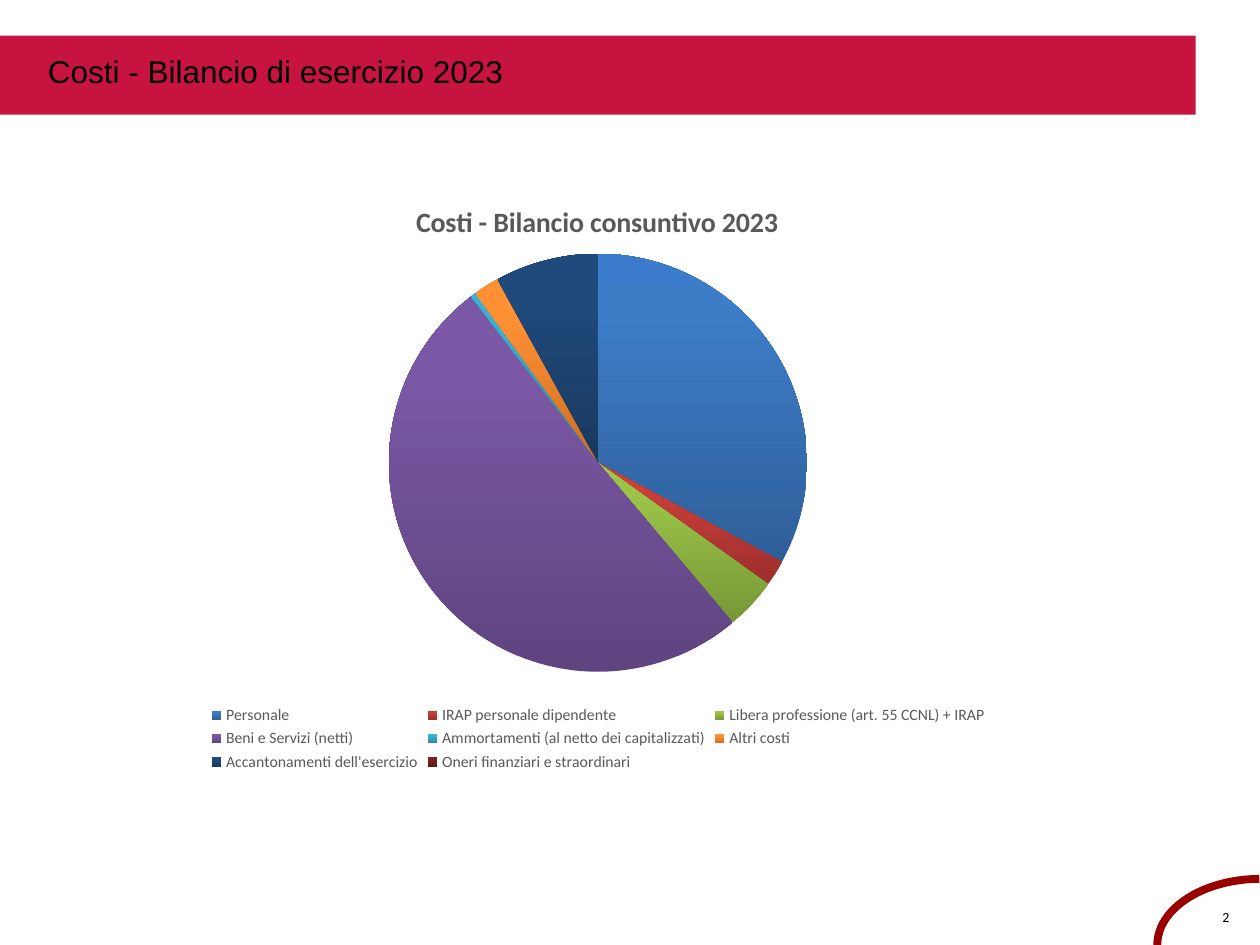
from copy import deepcopy

from lxml import etree
from pptx import Presentation
from pptx.chart.data import CategoryChartData
from pptx.dml.color import RGBColor
from pptx.enum.chart import XL_CHART_TYPE, XL_LEGEND_POSITION
from pptx.enum.shapes import MSO_SHAPE
from pptx.enum.text import MSO_ANCHOR, MSO_AUTO_SIZE, PP_ALIGN
from pptx.oxml.ns import qn
from pptx.util import Pt

PIE = XL_CHART_TYPE.PIE
BOTTOM = XL_LEGEND_POSITION.BOTTOM
RECTANGLE, ARC = MSO_SHAPE.RECTANGLE, MSO_SHAPE.ARC
TOP = MSO_ANCHOR.TOP
NO_AUTOFIT = MSO_AUTO_SIZE.NONE
LEFT, CENTER = PP_ALIGN.LEFT, PP_ALIGN.CENTER

# Content
TITLE = "Costi - Bilancio di esercizio 2023"
CHART_TITLE = "Costi - Bilancio consuntivo 2023"
PAGE_NUMBER = "2"
COSTS = [  # category, percentage, gradient colours from bottom to top
    ("Personale", 33, ("2F5F99", "3D7CC7", "3A7CCB")),
    ("IRAP personale dipendente", 2, ("9C2F2D", "CB3E3A", "CE3B37")),
    ("Libera professione (art. 55 CCNL) + IRAP", 4, ("779737", "9BC348", "9DC746")),
    ("Beni e Servizi (netti)", 51, ("5F4480", "7B58A6", "7C57A8")),
    ("Ammortamenti (al netto dei capitalizzati)", 0.4, ("2A88A2", "37B1D2", "34B4D6")),
    ("Altri costi", 2, ("CC6E20", "FF9034", "FF9136")),
    ("Accantonamenti dell'esercizio", 8, ("19395F", "204A7C", "1E4A7E")),
    ("Oneri finanziari e straordinari", 0, ("621917", "7F201E", "811F1C")),
]

# Theme and positions (points)
THEME = {
    "band": "C6133F", "arc": "990000", "text": "000000", "chart_text": "595959",
    "heading_font": "Arial", "body_font": "Calibri",
    "title_size": 18, "chart_title_size": 16, "chart_size": 10,
    "legend_size": 9, "number_size": 8, "arc_width": 4.5,
}
GRADIENT_STOPS = (0, 0.8, 1)
ARC_BOX = (682.5, 481, 75.6, 118)
NUMBER_BOX = (689, 517, 23, 11.5)
BAND_BOX = (0, 20.3, 683.3, 45.2)
CHART_BOX = (27.4, 95.8, 628.6, 347.8)
TITLE_BOX = (20.2, 25.9, 447.8, 51.1)
# Shares of the chart area
PIE_LAYOUT = {"x": 0.31, "y": 0.14, "w": 0.38, "h": 0.69}
CHART_TITLE_LAYOUT = {"x": 0.33, "y": 0.05}


def points(box):
    return [Pt(value) for value in box]


def color(name):
    return RGBColor.from_string(THEME[name])


def style_font(font, size, color_name, family="body_font", bold=False):
    font.size = Pt(THEME[size])
    font.name = THEME[family]
    font.bold = bold
    font.color.rgb = color(color_name)


def write(text_frame, text, alignment, size, family):
    text_frame.word_wrap = True
    text_frame.vertical_anchor = TOP
    paragraph = text_frame.paragraphs[0]
    paragraph.alignment = alignment
    run = paragraph.add_run()
    run.text = text
    style_font(run.font, size, "text", family)


def set_layout(parent, index, layout):
    """Place a chart part by shares of the chart area."""
    for old in parent.findall(qn("c:layout")):
        parent.remove(old)
    element = etree.Element(qn("c:layout"))
    manual = etree.SubElement(element, qn("c:manualLayout"))
    if "w" in layout:
        etree.SubElement(manual, qn("c:layoutTarget"), val="inner")
    for axis in ("x", "y"):
        etree.SubElement(manual, qn(f"c:{axis}Mode"), val="edge")
    for key, value in layout.items():
        etree.SubElement(manual, qn(f"c:{key}"), val=str(value))
    parent.insert(index, element)


def fill_slice(fill, colors):
    fill.gradient()
    fill.gradient_angle = 90
    first = fill.gradient_stops[0]._gs
    first.addnext(deepcopy(first))
    for stop, position, value in zip(fill.gradient_stops, GRADIENT_STOPS, colors):
        stop.position = position
        stop.color.rgb = RGBColor.from_string(value)


presentation = Presentation()
presentation.slide_width, presentation.slide_height = Pt(720), Pt(540)
slide = presentation.slides.add_slide(presentation.slide_layouts[5])
shapes = slide.shapes

# Corner arc and page number
arc = shapes.add_shape(ARC, *points(ARC_BOX))
arc.rotation = 270
arc.adjustments[0], arc.adjustments[1] = 162, 215.34
arc.shadow.inherit = False
arc.fill.background()
arc.line.color.rgb = color("arc")
arc.line.width = Pt(THEME["arc_width"])

number = shapes.add_textbox(*points(NUMBER_BOX)).text_frame
number.margin_left = number.margin_right = number.margin_bottom = 0
number.margin_top = Pt(2)
write(number, PAGE_NUMBER, CENTER, "number_size", "body_font")

# Title band
band = shapes.add_shape(RECTANGLE, *points(BAND_BOX))
band.shadow.inherit = False
band.fill.solid()
band.fill.fore_color.rgb = color("band")
band.line.fill.background()

# Pie chart
chart_data = CategoryChartData()
chart_data.categories = [name for name, _, _ in COSTS]
chart_data.add_series("Series 1", [value for _, value, _ in COSTS])
chart = shapes.add_chart(PIE, *points(CHART_BOX), chart_data).chart
style_font(chart.font, "chart_size", "text")

chart.has_title = True
chart_title = chart.chart_title
run = chart_title.text_frame.paragraphs[0].add_run()
run.text = CHART_TITLE
style_font(run.font, "chart_title_size", "chart_text", bold=True)
set_layout(chart_title._element, 1, CHART_TITLE_LAYOUT)

chart.has_legend = True
chart.legend.position = BOTTOM
chart.legend.include_in_layout = False
style_font(chart.legend.font, "legend_size", "chart_text")

plot = chart.plots[0]
plot.vary_by_categories = True
set_layout(plot._element.getparent(), 0, PIE_LAYOUT)
for index, (_, _, colors) in enumerate(COSTS):
    slice_format = plot.series[0].points[index].format
    fill_slice(slice_format.fill, colors)
    slice_format.line.fill.background()

# Title, brought in front of the band
title = shapes.title
title.left, title.top, title.width, title.height = points(TITLE_BOX)
title.text_frame.auto_size = NO_AUTOFIT
write(title.text_frame, TITLE, LEFT, "title_size", "heading_font")
title_element = title._element
title_element.getparent().append(title_element)

presentation.save("out.pptx")
